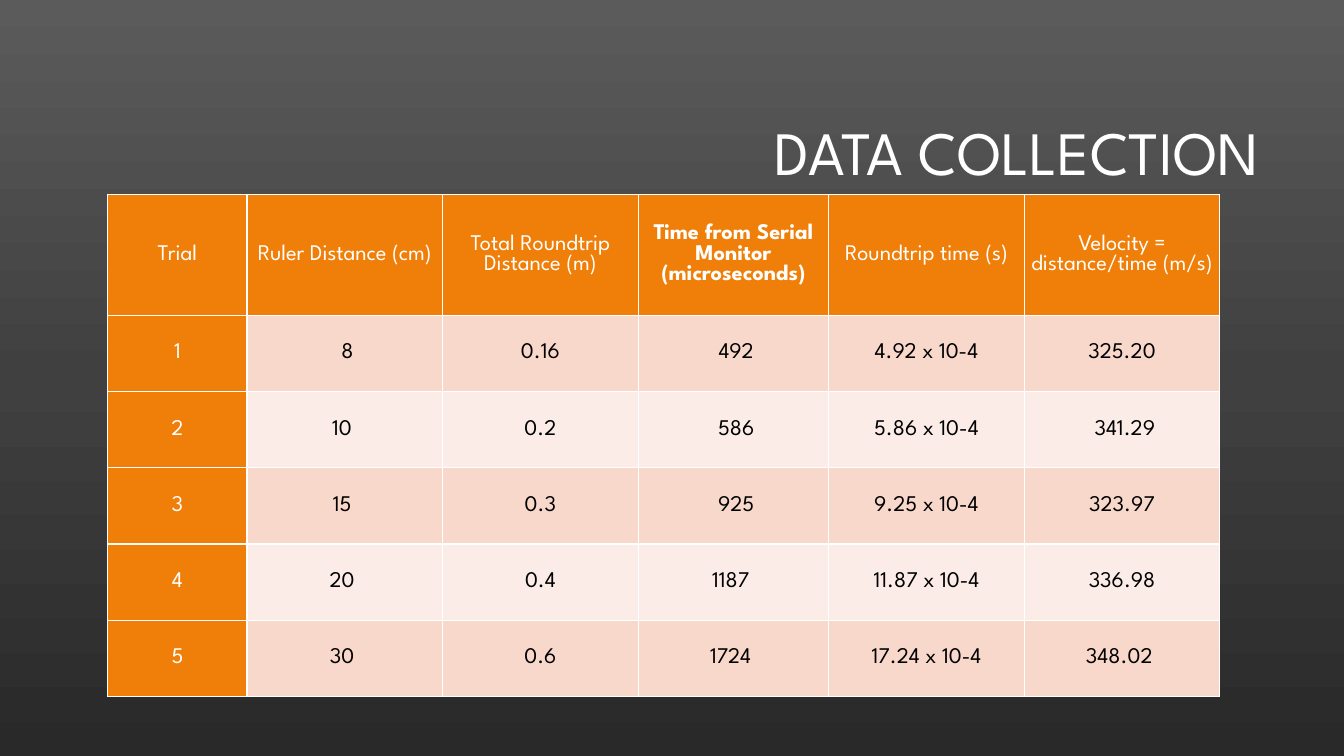
from copy import deepcopy
from dataclasses import dataclass

from lxml.etree import SubElement
from pptx import Presentation
from pptx.dml.color import RGBColor as Rgb
from pptx.enum.text import MSO_ANCHOR as Anchor, PP_ALIGN as Align
from pptx.oxml.ns import qn
from pptx.slide import Slide
from pptx.table import _Cell as Cell
from pptx.text.text import TextFrame
from pptx.util import Inches, Pt

FONT = "League Spartan"
COLORS = {
    "white": "FFFFFF",
    "black": "000000",
    "orange": "F07F09",
    "band_dark": "F9D8CC",
    "band_light": "FCECE7",
    "sky": "5B5B5B",
    "middle": "404040",
    "ground": "292929",
}


@dataclass(frozen=True)
class Column:
    heading: str
    width: float
    values: tuple[str, ...]
    bold_heading: bool = False


# Some values carry a no-break space, which shifts them off centre.
COLUMNS = (
    Column("Trial", 1.38, ("1", "2", "3", "4", "5")),
    Column("Ruler Distance (cm)", 1.94, (" 8", "10 ", "15 ", "20 ", "30 ")),
    Column("Total Roundtrip Distance (m)", 1.94, ("0.16", "0.2", "0.3", "0.4", "0.6")),
    Column("Time from Serial Monitor (microseconds)", 1.89,
           (" 492", " 586", " 925", "1187 ", "1724 "), bold_heading=True),
    Column("Roundtrip time (s)", 1.94,
           ("4.92 x 10-4", "5.86 x 10-4", "9.25 x 10-4", "11.87 x 10-4", "17.24 x 10-4")),
    Column("Velocity = distance/time (m/s)", 1.94,
           ("325.20", " 341.29", "323.97", "336.98", "348.02 ")),
)
TABLE_HEIGHT = 4.98
HEADER_HEIGHT = 1.2


def color(name: str) -> Rgb:
    return Rgb.from_string(COLORS[name])


def write(frame: TextFrame, text: str, *, size: float, ink: str = "white",
          align: Align = Align.CENTER, bold: bool = False,
          line_spacing: float | None = None) -> None:
    para = frame.paragraphs[0]
    para.alignment = align
    para.line_spacing = line_spacing
    span = para.add_run()
    span.text = text
    span.font.name = FONT
    span.font.size = Pt(size)
    span.font.bold = bold
    span.font.color.rgb = color(ink)


def add_borders(cell: Cell) -> None:
    """Rule all four sides in white; must run before the cell gets its fill."""
    properties = cell._tc.get_or_add_tcPr()
    for side in ("lnL", "lnR", "lnT", "lnB"):
        line = SubElement(properties, qn(f"a:{side}"), w=str(Pt(1)))
        fill = SubElement(line, qn("a:solidFill"))
        SubElement(fill, qn("a:srgbClr"), val=COLORS["white"])


def fill_cell(cell: Cell, text: str, *, fill: str, ink: str, bold: bool = False) -> None:
    cell.vertical_anchor = Anchor.MIDDLE
    cell.margin_left = cell.margin_right = Inches(0.07)
    cell.margin_top = cell.margin_bottom = 0
    add_borders(cell)
    cell.fill.solid()
    cell.fill.fore_color.rgb = color(fill)
    write(cell.text_frame, text, size=16, ink=ink, bold=bold)


def paint_background(page: Slide) -> None:
    fill = page.background.fill
    fill.gradient()
    fill.gradient_angle = 270
    stop_list = page.element.xpath(".//a:gsLst")[0]
    stop_list.append(deepcopy(stop_list[0]))
    shades = ((0, "sky"), (0.5, "middle"), (1, "ground"))
    for stop, (position, shade) in zip(fill.gradient_stops, shades):
        stop.position = position
        stop.color.rgb = color(shade)


def add_title(page: Slide) -> None:
    box = page.shapes.add_textbox(Inches(3.17), Inches(0.84), Inches(9.42), Inches(1.41))
    frame = box.text_frame
    frame.word_wrap = True
    frame.vertical_anchor = Anchor.MIDDLE
    write(frame, "DATA COLLECTION", size=44, align=Align.RIGHT, line_spacing=0.9)


def add_trials_table(page: Slide) -> None:
    trials = len(COLUMNS[0].values)
    width = sum(column.width for column in COLUMNS)
    table = page.shapes.add_table(
        trials + 1, len(COLUMNS),
        Inches(1.07), Inches(1.93), Inches(width), Inches(TABLE_HEIGHT),
    ).table
    table.first_row = table.horz_banding = False
    table.rows[0].height = Inches(HEADER_HEIGHT)
    for row in range(1, trials + 1):
        table.rows[row].height = Inches((TABLE_HEIGHT - HEADER_HEIGHT) / trials)

    for index, column in enumerate(COLUMNS):
        table.columns[index].width = Inches(column.width)
        fill_cell(table.cell(0, index), column.heading, fill="orange", ink="white",
                  bold=column.bold_heading)
        for row, value in enumerate(column.values, start=1):
            band = "band_dark" if row % 2 else "band_light"
            fill, ink = (band, "black") if index else ("orange", "white")
            fill_cell(table.cell(row, index), value, fill=fill, ink=ink)


def main() -> None:
    deck = Presentation()
    deck.slide_width, deck.slide_height = Inches(13.33), Inches(7.5)
    page = deck.slides.add_slide(deck.slide_layouts[6])
    paint_background(page)
    add_title(page)
    add_trials_table(page)
    deck.save("out.pptx")


if __name__ == "__main__":
    main()
